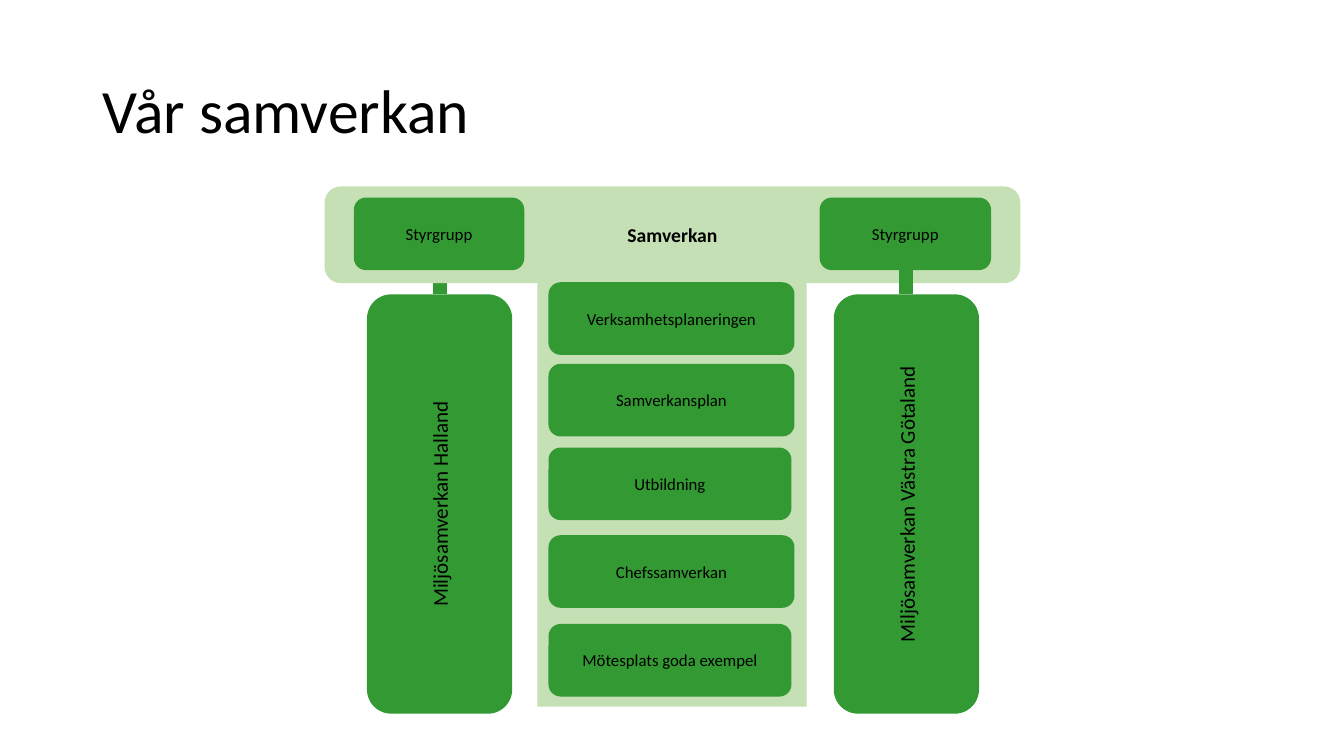
import pptx
import pptx.util
import pptx.dml.color
import pptx.enum.shapes
import pptx.enum.text
import pptx.oxml.ns
import lxml.etree

SCALE = 9144
FONT = "Calibri"
COLORS = {"text": "000000", "green": "339933", "pale": "C5E0B4"}

TITLE = ("Vår samverkan", (92, 40, 1150, 145))
BEAM = ("Samverkan", (322, 185, 690, 96))
COLUMN = (533, 281, 267, 420)
PILLAR_CENTER_Y = 500
PILLAR_SIZE = (416, 144)
PILLAR_TOP = PILLAR_CENTER_Y - PILLAR_SIZE[0] // 2
PILLARS = [("Miljösamverkan Halland", 436), ("Miljösamverkan Västra Götaland", 899)]
STEERING_GROUPS = [("Styrgrupp", 351, 169), ("Styrgrupp", 813, 170)]
STEERING_TOP = 196
CARD_LEFT = 544
CARD_HEIGHT = 72
CARDS = [
    ("Verksamhetsplaneringen", 280, 244),
    ("Samverkansplan", 361, 244),
    ("Utbildning", 444, 241),
    ("Chefssamverkan", 531, 244),
    ("Mötesplats goda exempel", 619, 241),
]
STEM_TOPS = (260, 263)


def px(value):
    return pptx.util.Emu(value * SCALE)


def rgb(name):
    return pptx.dml.color.RGBColor.from_string(COLORS[name])


def write_text(shape, text, size=12, bold=False, centered=True, line_spacing=1.0, side_inset=10):
    frame = shape.text_frame
    frame.word_wrap = True
    frame.vertical_anchor = pptx.enum.text.MSO_ANCHOR.MIDDLE
    frame.margin_left = frame.margin_right = px(side_inset)
    para = frame.paragraphs[0]
    alignments = pptx.enum.text.PP_ALIGN
    para.alignment = alignments.CENTER if centered else alignments.LEFT
    para.line_spacing = line_spacing
    span = para.add_run()
    span.text = text
    span.font.name = FONT
    span.font.size = pptx.util.Pt(size)
    span.font.bold = bold
    span.font.color.rgb = rgb("text")


def add_block(page, bounds, color, text=None, rotation=0, corner=None, **text_format):
    kind = pptx.enum.shapes.MSO_SHAPE.ROUNDED_RECTANGLE
    block = page.shapes.add_shape(kind, *map(px, bounds))
    block.shadow.inherit = False
    block.fill.solid()
    block.fill.fore_color.rgb = rgb(color)
    block.line.fill.background()
    block.rotation = rotation
    if corner is not None:
        block.adjustments[0] = corner
    if text:
        write_text(block, text, **text_format)
    return block


def add_stem(page, x, top):
    kind = pptx.enum.shapes.MSO_CONNECTOR.STRAIGHT
    stem = page.shapes.add_connector(kind, px(x), px(top), px(x), px(PILLAR_TOP))
    stem.line.color.rgb = rgb("green")
    stem.line.width = pptx.util.Pt(10)
    properties = stem._element.spPr
    lxml.etree.SubElement(properties, pptx.oxml.ns.qn("a:effectLst"))
    return stem


def join_stem(stem, pillar, x):
    stem.end_connect(pillar, 3)
    stem.end_x, stem.end_y = px(x), px(PILLAR_TOP)


def main():
    deck = pptx.Presentation()
    deck.slide_width, deck.slide_height = px(1333), px(750)
    page = deck.slides.add_slide(deck.slide_layouts[6])

    title, title_bounds = TITLE
    box = page.shapes.add_textbox(*map(px, title_bounds))
    write_text(box, title, size=44, centered=False, line_spacing=0.9)

    (_, left_x), (_, right_x) = PILLARS
    left_stem = add_stem(page, left_x, STEM_TOPS[0])
    beam_text, beam_bounds = BEAM
    add_block(page, beam_bounds, "pale", beam_text, size=14, bold=True)
    add_block(page, COLUMN, "pale", corner=0)

    pillars = []
    width, height = PILLAR_SIZE
    for text, x in PILLARS:
        bounds = (x - width // 2, PILLAR_CENTER_Y - height // 2, width, height)
        pillars.append(add_block(page, bounds, "green", text, rotation=270, size=15))

    for text, left, group_width in STEERING_GROUPS:
        bounds = (left, STEERING_TOP, group_width, CARD_HEIGHT)
        add_block(page, bounds, "green", text, side_inset=6)

    for text, top, card_width in CARDS:
        add_block(page, (CARD_LEFT, top, card_width, CARD_HEIGHT), "green", text)

    right_stem = add_stem(page, right_x, STEM_TOPS[1])
    join_stem(left_stem, pillars[0], left_x)
    join_stem(right_stem, pillars[1], right_x)

    deck.save("out.pptx")


if __name__ == "__main__":
    main()
